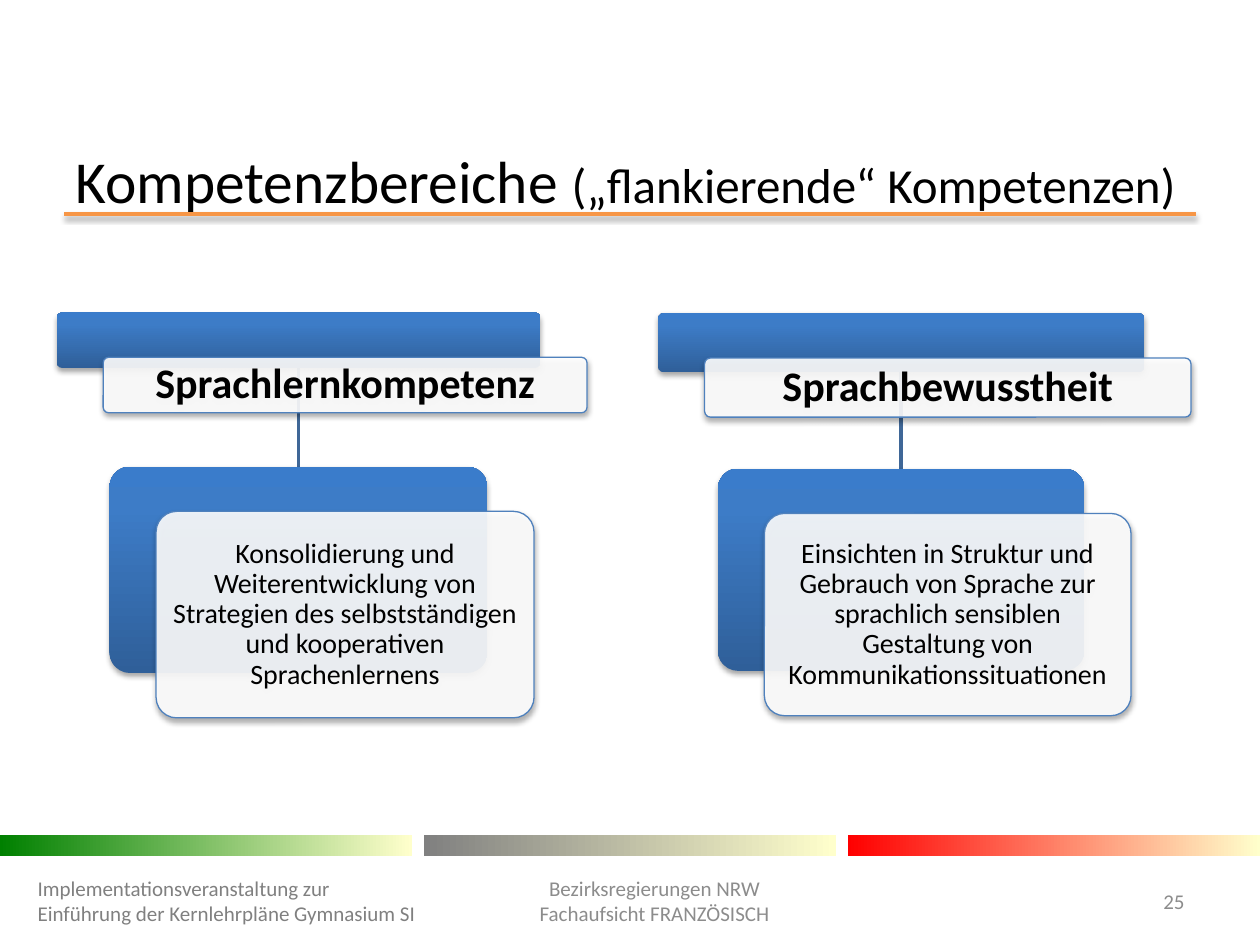
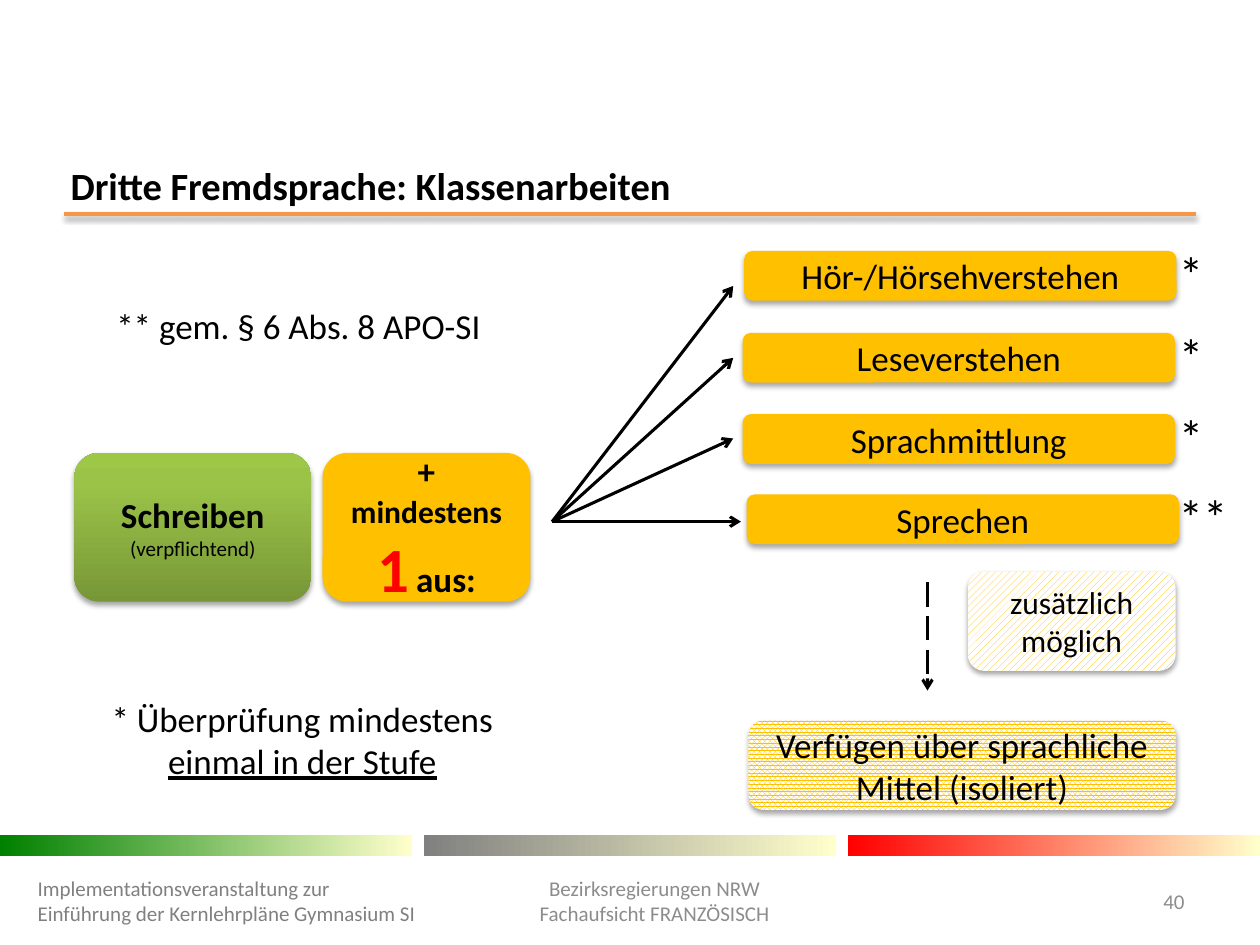
from lxml import etree
from pptx import Presentation
from pptx.dml.color import RGBColor
from pptx.enum.dml import MSO_LINE, MSO_PATTERN
from pptx.enum.shapes import MSO_CONNECTOR, MSO_SHAPE
from pptx.enum.text import MSO_ANCHOR, MSO_AUTO_SIZE, PP_ALIGN
from pptx.oxml.ns import qn
from pptx.util import Pt

LEFT, CENTER, RIGHT = PP_ALIGN.LEFT, PP_ALIGN.CENTER, PP_ALIGN.RIGHT
MIDDLE, TOP, BOTTOM = MSO_ANCHOR.MIDDLE, MSO_ANCHOR.TOP, MSO_ANCHOR.BOTTOM
RECTANGLE, ROUNDED = MSO_SHAPE.RECTANGLE, MSO_SHAPE.ROUNDED_RECTANGLE
LONG_DASH = MSO_LINE.LONG_DASH
DOTS, STRIPES = MSO_PATTERN.PERCENT_80, MSO_PATTERN.WIDE_UPWARD_DIAGONAL

BLACK = RGBColor(0x00, 0x00, 0x00)
WHITE = RGBColor(0xFF, 0xFF, 0xFF)
RED = RGBColor(0xFF, 0x00, 0x00)
GREEN = RGBColor(0x00, 0x80, 0x00)
GRAY = RGBColor(0x80, 0x80, 0x80)
LIGHT_GRAY = RGBColor(0x8C, 0x8C, 0x8C)
CREAM = RGBColor(0xFF, 0xFF, 0xCC)
ORANGE = RGBColor(0xF7, 0x96, 0x46)
AMBER = RGBColor(0xFF, 0xC0, 0x00)
BLUE = RGBColor(0x4F, 0x81, 0xBD)
STEEL = RGBColor(0x3F, 0x67, 0x97)

# Gradient stops as (percent, colour), from bottom to top
BLUE_STOPS = [(0, RGBColor(0x2F, 0x5F, 0x99)), (80, RGBColor(0x3D, 0x7C, 0xC7)),
              (100, RGBColor(0x3A, 0x7C, 0xCB))]
LIME_STOPS = [(0, RGBColor(0x77, 0x97, 0x37)), (80, RGBColor(0x9B, 0xC3, 0x48)),
              (100, RGBColor(0x9D, 0xC7, 0x46))]


def add_element(parent, tag, **attributes):
    values = {name: str(value) for name, value in attributes.items()}
    return etree.SubElement(parent, qn(tag), values)


class Deck:
    FONT = "Calibri"

    def __init__(self):
        self.presentation = Presentation()
        self.presentation.slide_width = Pt(720)
        self.presentation.slide_height = Pt(540)
        self.slide = None

    def new_slide(self, number):
        self.slide = self.presentation.slides.add_slide(self.presentation.slide_layouts[5])
        # Title rule and colour bands
        rule = self.line((36.7, 122.4), (683.3, 122.4), ORANGE, 2)
        self.shadow(rule)
        for index, color in enumerate((GREEN, GRAY, RED)):
            band = self.box((index * 242.3, 477.4, 235.4, 11.5), kind=RECTANGLE, shadow=False)
            self.gradient(band, [(0, color), (100, CREAM)], 0)
        # Footer
        self.text((14.4, 500.4, 233.3, 28.8), [[
            ("Implementationsveranstaltung zur", 12, GRAY), None,
            ("Einführung der Kernlehrpläne Gymnasium SI", 12, GRAY)]], LEFT, MIDDLE)
        self.text((269.3, 488.9, 209.5, 51.1), [
            [("Bezirksregierungen NRW", 12, LIGHT_GRAY)],
            [("Fachaufsicht FRANZÖSISCH", 12, LIGHT_GRAY)]], CENTER, MIDDLE)
        self.text((637.9, 500.4, 46.1, 28.8), [[(str(number), 12, LIGHT_GRAY)]], RIGHT, MIDDLE)

    def fill_text(self, shape, paragraphs, align, anchor, spacing=None):
        """Fill a shape; a run is (text, size, colour, styles), None breaks the line."""
        frame = shape.text_frame
        frame.word_wrap = True
        frame.auto_size = MSO_AUTO_SIZE.NONE
        frame.vertical_anchor = anchor
        for index, runs in enumerate(paragraphs):
            paragraph = frame.add_paragraph() if index else frame.paragraphs[0]
            paragraph.alignment = align
            paragraph.line_spacing = spacing
            for item in runs:
                if item is None:
                    paragraph.add_line_break()
                    continue
                text, size, color, *styles = item
                run = paragraph.add_run()
                run.text = text
                run.font.name = self.FONT
                run.font.size = Pt(size)
                run.font.color.rgb = color
                run.font.bold = "bold" in styles
                run.font.underline = "underline" in styles

    def title(self, area, runs, anchor):
        shape = self.slide.shapes.title
        shape.left, shape.top, shape.width, shape.height = map(Pt, area)
        self.fill_text(shape, [runs], LEFT, anchor)

    def text(self, area, paragraphs, align=LEFT, anchor=TOP):
        shape = self.slide.shapes.add_textbox(*map(Pt, area))
        self.fill_text(shape, paragraphs, align, anchor)

    def shadow(self, shape):
        effects = shape._element.spPr.find(qn("a:effectLst"))
        outer = add_element(effects, "a:outerShdw", blurRad=Pt(3.1), dist=Pt(1.8),
                            dir=5400000, rotWithShape=0)
        color = add_element(outer, "a:srgbClr", val=BLACK)
        add_element(color, "a:alpha", val=35000)

    def gradient(self, shape, stops, angle):
        shape.fill.gradient()
        shape.fill.gradient_angle = angle
        stop_list = shape._element.spPr.find(qn("a:gradFill")).find(qn("a:gsLst"))
        for stop in list(stop_list):
            stop_list.remove(stop)
        for percent, color in stops:
            stop = add_element(stop_list, "a:gs", pos=percent * 1000)
            add_element(stop, "a:srgbClr", val=color)

    def box(self, area, paragraphs=(), fill=None, kind=ROUNDED, corner=None,
            shadow=True, spacing=None):
        shape = self.slide.shapes.add_shape(kind, *map(Pt, area))
        shape.shadow.inherit = False
        shape.line.fill.background()
        if corner:
            shape.adjustments[0] = corner
        if isinstance(fill, list):
            self.gradient(shape, fill, 90)
        elif fill:
            shape.fill.solid()
            shape.fill.fore_color.rgb = fill
        if shadow:
            self.shadow(shape)
        self.fill_text(shape, paragraphs, CENTER, MIDDLE, spacing)
        return shape

    def pattern_box(self, area, pattern, paragraphs):
        shape = self.box(area, paragraphs)
        shape.fill.patterned()
        shape.fill.pattern = pattern
        shape.fill.fore_color.rgb = AMBER
        shape.fill.back_color.rgb = WHITE

    def layered_box(self, area, runs, inset):
        """A blue box with a translucent white text card shifted over it."""
        left, top, width, height = area
        self.box(area, fill=BLUE_STOPS, corner=0.1)
        card = self.box((left + 26.6, top + 25.6, width, height), [runs], WHITE,
                        corner=0.1, spacing=0.9)
        color = card._element.spPr.find(qn("a:solidFill"))[0]
        add_element(color, "a:alpha", val=90000)
        card.line.color.rgb = BLUE
        card.line.width = Pt(0.75)
        frame = card.text_frame
        frame.margin_left = frame.margin_right = Pt(inset)
        frame.margin_top = frame.margin_bottom = Pt(inset)

    def line(self, start, end, color=BLACK, width=1.75, arrow=False, dash=None):
        connector = self.slide.shapes.add_connector(
            MSO_CONNECTOR.STRAIGHT, *map(Pt, start + end))
        connector.line.color.rgb = color
        connector.line.width = Pt(width)
        if dash:
            connector.line.dash_style = dash
        properties = connector._element.spPr
        if arrow:
            add_element(properties.find(qn("a:ln")), "a:tailEnd", type="arrow")
        add_element(properties, "a:effectLst")
        return connector


def build_competences(deck):
    deck.new_slide(25)
    deck.title((36, 78.5, 648, 48.2), [
        ("Kompetenzbereiche ", 34, BLACK),
        ("(„flankierende“ Kompetenzen)", 28, BLACK)], MIDDLE)
    clusters = [
        ("Sprachlernkompetenz", (32.4, 178.6, 276.5, 31.7), (62.6, 266.6, 216, 118),
         [("Konsolidierung und Weiterentwicklung von Strategien des selbstständigen "
           "und kooperativen Sprachenlernens", 16, BLACK)]),
        ("Sprachbewusstheit", (376, 179, 278, 33.8), (410.2, 267.8, 209.5, 115.6),
         [("Einsichten in Struktur und Gebrauch von Sprache zur", 16, BLACK),
          (" ", 14, BLACK),
          ("sprachlich sensiblen Gestaltung von Kommunikationssituationen", 16, BLACK)]),
    ]
    for heading, head, body, description in clusters:
        middle = body[0] + body[2] / 2
        deck.line((middle, head[1] + head[3]), (middle, body[1]), STEEL, 2)
        deck.layered_box(head, [(heading, 24, BLACK, "bold")], 7.2)
        deck.layered_box(body, description, 4.5)


def build_class_tests(deck):
    deck.new_slide(40)
    deck.title((33.1, 76.3, 643, 46.1),
               [("Dritte Fremdsprache: Klassenarbeiten", 22, BLACK, "bold")], BOTTOM)

    # Skills to choose from, each with its arrow and footnote mark
    hub = (315.5, 298.1)
    skills = [
        ("Hör-/Hörsehverstehen", "*", 425.3, 143.4, (419, 163.4)),
        ("Leseverstehen", "*", 424.4, 190.2, (419, 204.5)),
        ("Sprachmittlung", "*", 424.4, 236.7, (419, 250.6)),
        ("Sprechen", "**", 426.7, 282.5, (423.4, 298.1)),
    ]
    for skill, mark, left, top, arrow_end in skills:
        deck.box((left, top, 247, 28.4), [[(skill, 20, BLACK)]], AMBER)
        deck.text((666.5, top - 7.8, 26 * len(mark), 41), [[(mark, 28, BLACK)]])
        deck.line(hub, arrow_end, arrow=True)

    # Required parts
    deck.box((42.5, 258.8, 135.4, 85), [
        [("Schreiben", 20, BLACK, "bold")],
        [("(verpflichtend)", 12, BLACK)]], LIME_STOPS)
    deck.box((184.3, 258.8, 118.8, 85), [[
        ("+", 20, BLACK, "bold"), (" mindestens ", 18, BLACK, "bold"),
        ("1", 36, RED, "bold"), (" ", 18, BLACK, "bold"),
        ("aus:", 20, BLACK, "bold")]], AMBER)

    # Optional part
    deck.line((530, 332.6), (530, 394.6), arrow=True, dash=LONG_DASH)
    deck.pattern_box((553, 326.7, 118.8, 56.7), STRIPES, [[("zusätzlich möglich", 18, BLACK)]])
    deck.pattern_box((427.7, 411.8, 244.1, 51), DOTS,
                     [[("Verfügen über sprachliche Mittel (isoliert)", 20, BLACK)]])

    # Footnotes
    deck.box((40.3, 146.2, 260.6, 79.2), [[("** gem. § 6 Abs. 8 APO-SI", 20, BLACK)]],
             WHITE, shadow=False)
    deck.box((42.5, 383, 260.6, 79.2), [
        [("* Überprüfung mindestens", 20, BLACK)],
        [("einmal in der Stufe", 20, BLACK, "underline")]], WHITE, shadow=False)


def main():
    deck = Deck()
    build_competences(deck)
    build_class_tests(deck)
    deck.presentation.save("out.pptx")


if __name__ == "__main__":
    main()
